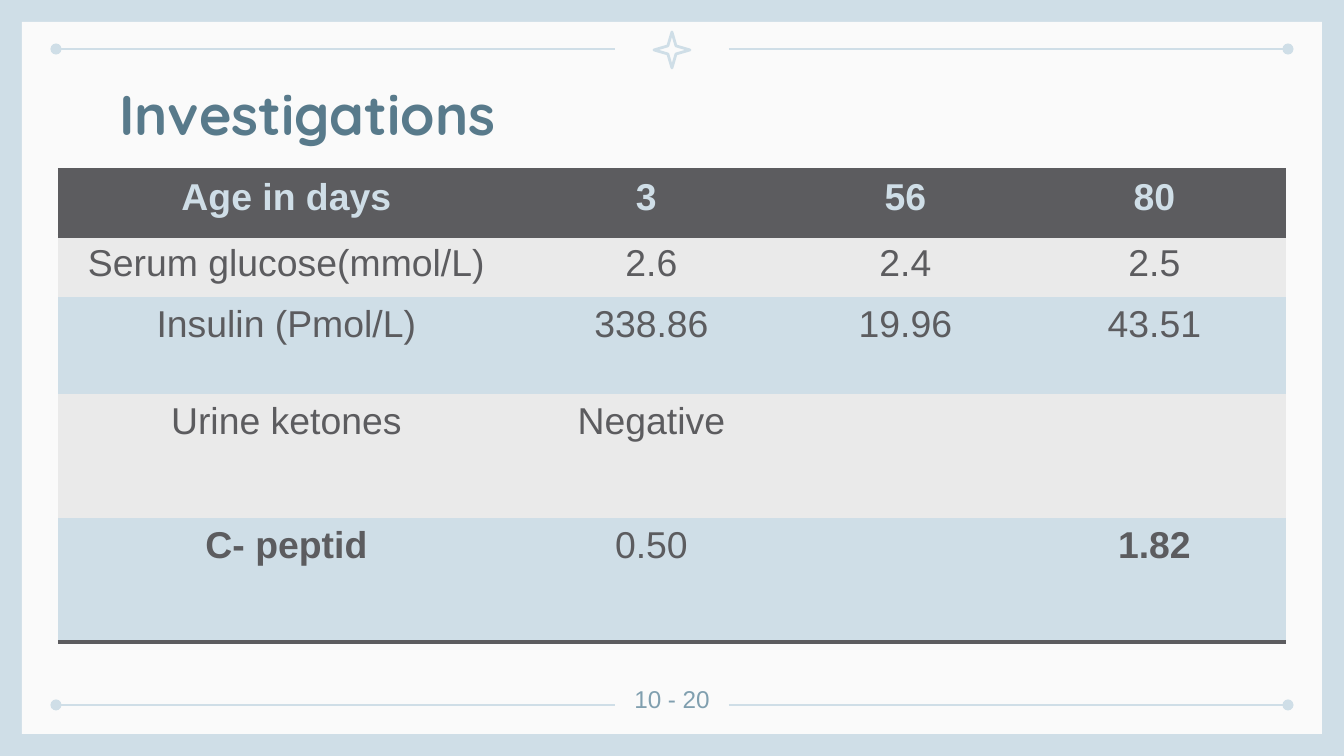
import pptx
import pptx.dml.color
import pptx.enum.shapes
import pptx.enum.text
import pptx.oxml
import pptx.oxml.ns
import pptx.util

RGBColor = pptx.dml.color.RGBColor
ALIGN = pptx.enum.text.PP_ALIGN
SHAPE = pptx.enum.shapes.MSO_SHAPE
PALE_BLUE = RGBColor(0xCF, 0xDE, 0xE7)
PAPER = RGBColor(0xFA, 0xFA, 0xFA)
SLATE = RGBColor(0x58, 0x7A, 0x8B)
PAGE_BLUE = RGBColor(0x80, 0x9F, 0xAF)
DARK_GREY = RGBColor(0x5C, 0x5C, 0x5F)
LIGHT_GREY = RGBColor(0xEA, 0xEA, 0xEA)

NAMESPACE = pptx.oxml.ns.nsdecls("a")
NO_STYLE = "{2D5ABB26-0587-4C30-8999-92F81FD0307C}"
SCALE = 9144000 / 1344


def px(*lengths):
    """Turn px lengths into a list of EMU values."""
    return [pptx.util.Emu(round(length * SCALE)) for length in lengths]


def write(frame, text, size, color, font="Arial", bold=False, align=ALIGN.CENTER):
    paragraph = frame.paragraphs[0]
    paragraph.alignment = align
    run = paragraph.add_run()
    run.text = text
    run.font.size = pptx.util.Pt(size)
    run.font.name = font
    run.font.bold = bold
    run.font.color.rgb = color


presentation = pptx.Presentation()
presentation.slide_width, presentation.slide_height = px(1344, 756)
slide = presentation.slides.add_slide(presentation.slide_layouts[5])
slide.background.fill.solid()
slide.background.fill.fore_color.rgb = PALE_BLUE

# Paper panel with its star and four rules
panel = slide.shapes.add_shape(SHAPE.RECTANGLE, *px(22, 22, 1300, 712))
panel.shadow.inherit = False
panel.fill.solid()
panel.fill.fore_color.rgb = PAPER
panel.line.fill.background()

star = slide.shapes.add_shape(SHAPE.STAR_4_POINT, *px(654, 32, 36, 36))
star.adjustments[0] = 0.16
star.shadow.inherit = False
star.fill.background()
star.line.color.rgb = PALE_BLUE
star.line.width = pptx.util.Pt(1.5)

for y in (49, 705):
    for left, right, dotted_end in ((56, 615, "headEnd"), (729, 1288, "tailEnd")):
        rule = slide.shapes.add_connector(
            pptx.enum.shapes.MSO_CONNECTOR.STRAIGHT, *px(left, y, right, y))
        rule.line.color.rgb = PALE_BLUE
        rule.line.width = pptx.util.Pt(1.5)
        rule.line._get_or_add_ln().append(
            pptx.oxml.parse_xml(f'<a:{dotted_end} {NAMESPACE} type="oval"/>'))
        rule.element.spPr.append(pptx.oxml.parse_xml(f"<a:effectLst {NAMESPACE}/>"))

# Title and page number
title = slide.shapes.title
title.left, title.top, title.width, title.height = px(106, 66, 921, 85)
title.element.getparent().append(title.element)  # bring in front of the panel
page_number = slide.shapes.add_textbox(*px(615, 671, 114, 48))
for shape in (title, page_number):
    frame = shape.text_frame
    frame.word_wrap = True
    frame.auto_size = pptx.enum.text.MSO_AUTO_SIZE.NONE
    frame.vertical_anchor = pptx.enum.text.MSO_ANCHOR.TOP
    frame.margin_left = frame.margin_right = pptx.util.Inches(0.1)
    frame.margin_top = frame.margin_bottom = pptx.util.Inches(0.1)
write(title.text_frame, "Investigations", 30, SLATE,
      font="Quicksand", bold=True, align=ALIGN.LEFT)
write(page_number.text_frame, "10 - 20", 13, PAGE_BLUE)

# Results table
rows = [
    ["Age in days", "3 ", "56", "80"],
    ["Serum glucose(mmol/L)", "2.6", "2.4", "2.5"],
    ["Insulin (Pmol/L)", "338.86", "19.96", "43.51"],
    ["Urine ketones", "Negative", "", ""],
    ["C- peptid", "0.50", "", "1.82"],
]
bold_results = ("C- peptid", "1.82")
column_widths = px(457, 273, 235, 263)
row_heights = px(66, 61, 97, 124, 124)
table_frame = slide.shapes.add_table(
    len(rows), len(column_widths), *px(58, 170), sum(column_widths), sum(row_heights))
next(table_frame.element.iter(pptx.oxml.ns.qn("a:tableStyleId"))).text = NO_STYLE
table = table_frame.table
table.horz_banding = False
for column, width in zip(table.columns, column_widths):
    column.width = width
for row, height in zip(table.rows, row_heights):
    row.height = height

for row_index, values in enumerate(rows):
    is_header = row_index == 0
    if is_header:
        fill, borders = DARK_GREY, ("lnT", "lnB")
    else:
        fill = LIGHT_GREY if row_index % 2 else PALE_BLUE
        borders = ("lnB",) if row_index == len(rows) - 1 else ()
    for column_index, text in enumerate(values):
        cell = table.cell(row_index, column_index)
        for side in borders:
            cell._tc.get_or_add_tcPr().append(pptx.oxml.parse_xml(
                f'<a:{side} {NAMESPACE} w="25400"><a:solidFill>'
                f'<a:srgbClr val="{DARK_GREY}"/></a:solidFill></a:{side}>'))
        cell.fill.solid()
        cell.fill.fore_color.rgb = fill
        if text:
            write(cell.text_frame, text, 20, PALE_BLUE if is_header else DARK_GREY,
                  bold=is_header or text in bold_results)

presentation.save("out.pptx")
